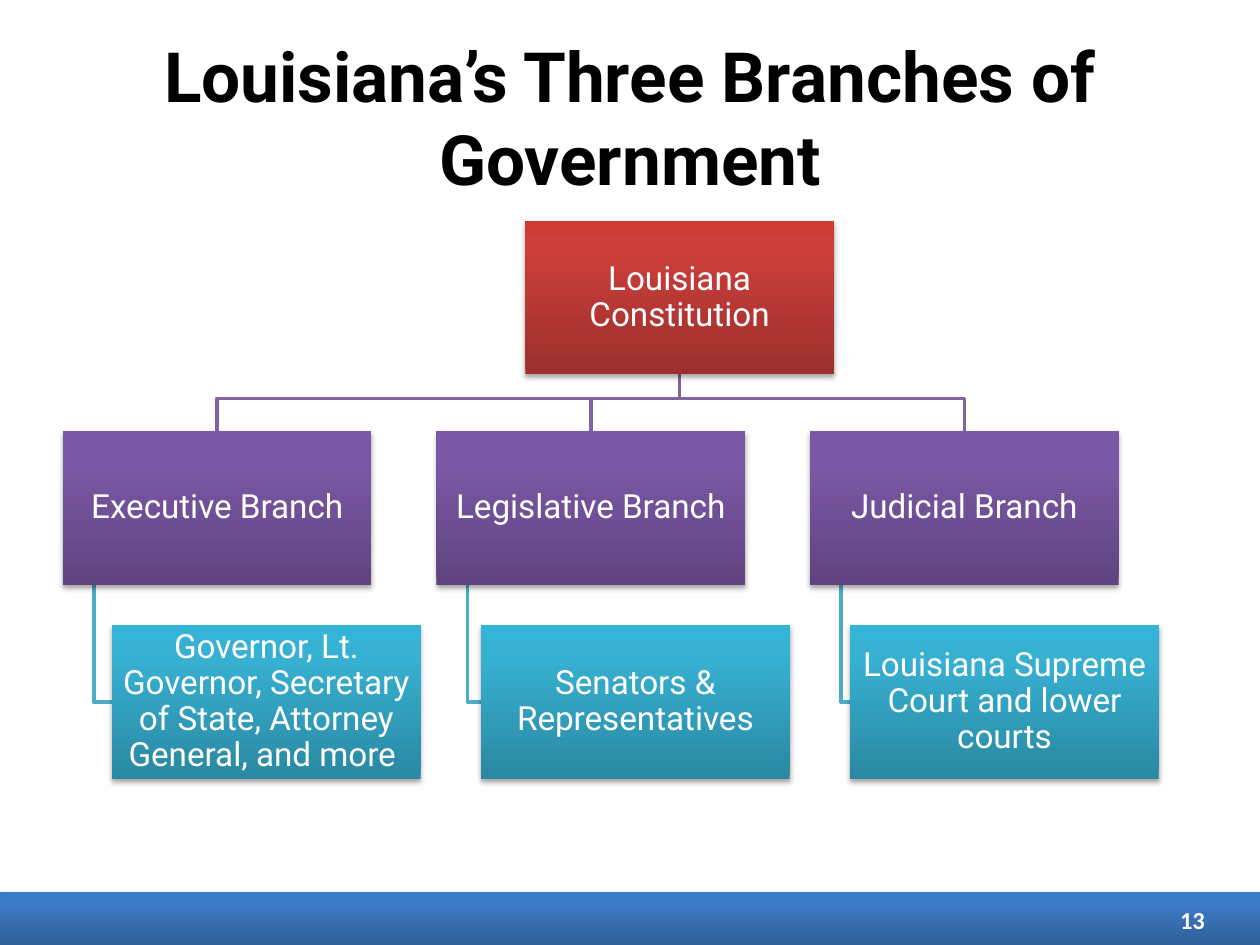
from lxml.etree import SubElement
from pptx import Presentation
from pptx.dml.color import RGBColor
from pptx.enum.shapes import MSO_SHAPE
from pptx.enum.text import MSO_ANCHOR, PP_ALIGN
from pptx.oxml.ns import qn
from pptx.util import Cm, Pt

TITLE = "Louisiana’s Three Branches of Government"
PAGE = "13"
ROOT = "Louisiana Constitution"
BRANCHES = [
    ("Executive Branch",
     "Governor, Lt. Governor, Secretary of State, Attorney General, and more "),
    ("Legislative Branch", "Senators & Representatives"),
    ("Judicial Branch", "Louisiana Supreme Court and lower courts"),
]

THEME = {
    "font": "Roboto", "page font": "Calibri",
    "title": 39.6, "node": 19, "page": 14,
    "dark": "000000", "light": "FFFFFF",
    "root": ("9C2F2D", "CB3E3A", "CE3B37"),
    "branch": ("5F4480", "7B58A6", "7C57A8"),
    "leaf": ("2A88A2", "37B1D2", "34B4D6"),
    "bar": ("2F5F99", "3D7CC7", "3A7CCB"),
    "branch line": "8064A2", "leaf line": "4BACC6", "line": 2,
}

WIDE, HIGH = 25.4, 19.05
BOX_W, BOX_H = 6.22, 3.1
ROOT_X, ROOT_Y = 10.59, 4.45
BRANCH_X, BRANCH_Y, BRANCH_STEP = 1.27, 8.69, 7.53
LEAF_X, LEAF_Y, LEAF_STEP = 2.26, 12.6, 7.44
BUS_Y = 8.03
BAR_H = 1.07

deck = Presentation()
deck.slide_width, deck.slide_height = Cm(WIDE), Cm(HIGH)
slide = deck.slides.add_slide(deck.slide_layouts[6])
shapes = slide.shapes


def write(shape, text, size, tint, font=THEME["font"], bold=False,
          align=PP_ALIGN.CENTER):
    frame = shape.text_frame
    frame.word_wrap = True
    frame.vertical_anchor = MSO_ANCHOR.MIDDLE
    frame.text = text
    para = frame.paragraphs[0]
    para.alignment = align
    face = para.runs[0].font
    face.name, face.size, face.bold = font, Pt(size), bold
    face.color.rgb = RGBColor.from_string(tint)
    return frame


def label(x, y, w, h, *args, **style):
    write(shapes.add_textbox(Cm(x), Cm(y), Cm(w), Cm(h)), *args, **style)


def block(x, y, w, h, tints):
    shape = shapes.add_shape(MSO_SHAPE.RECTANGLE, Cm(x), Cm(y), Cm(w), Cm(h))
    shape.line.fill.background()
    shape.fill.gradient()
    shape.fill.gradient_angle = 90
    stops = shape.element.spPr.find(".//" + qn("a:gsLst"))
    for old in list(stops):
        stops.remove(old)
    for pos, tint in zip((0, 80, 100), tints):
        stop = SubElement(stops, qn("a:gs"), pos=str(pos * 1000))
        SubElement(stop, qn("a:srgbClr"), val=tint)
    shape.shadow.inherit = False
    glow = SubElement(
        shape.element.spPr.find(qn("a:effectLst")), qn("a:outerShdw"),
        blurRad=str(Pt(3.1)), dist=str(Pt(1.8)), dir="5400000", rotWithShape="0")
    shade = SubElement(glow, qn("a:srgbClr"), val=THEME["dark"])
    SubElement(shade, qn("a:alpha"), val="35000")
    return shape


def node(x, y, text, kind):
    shape = block(x, y, BOX_W, BOX_H, THEME[kind])
    frame = write(shape, text, THEME["node"], THEME["light"])
    frame.margin_left = frame.margin_right = Cm(0.03)
    frame.margin_top = frame.margin_bottom = Cm(0.03)
    frame.paragraphs[0].line_spacing = 0.9


def link(points, kind):
    start, *rest = [(Cm(x), Cm(y)) for x, y in points]
    pen = shapes.build_freeform(*start)
    pen.add_line_segments(rest, close=False)
    shape = pen.convert_to_shape()
    shape.fill.background()
    shape.line.color.rgb = RGBColor.from_string(THEME[kind + " line"])
    shape.line.width = Pt(THEME["line"])
    shape.shadow.inherit = False


block(0, HIGH - BAR_H, WIDE, BAR_H, THEME["bar"])
label(1.27, 0.76, 22.86, 3.18, TITLE, THEME["title"], THEME["dark"], bold=True)
label(18.62, 18.03, 5.92, 1.02, PAGE, THEME["page"], THEME["light"],
      font=THEME["page font"], bold=True, align=PP_ALIGN.RIGHT)

spots = [(BRANCH_X + i * BRANCH_STEP, LEAF_X + i * LEAF_STEP)
         for i in range(len(BRANCHES))]
mid = ROOT_X + BOX_W / 2
for left, leaf in spots:
    stem = left + BOX_W / 10
    half = left + BOX_W / 2
    turn = LEAF_Y + BOX_H / 2
    link([(stem, BRANCH_Y + BOX_H), (stem, turn), (leaf, turn)], "leaf")
    link([(mid, ROOT_Y + BOX_H), (mid, BUS_Y), (half, BUS_Y),
          (half, BRANCH_Y)], "branch")

node(ROOT_X, ROOT_Y, ROOT, "root")
for (left, leaf), (name, staff) in zip(spots, BRANCHES):
    node(left, BRANCH_Y, name, "branch")
    node(leaf, LEAF_Y, staff, "leaf")

deck.save("out.pptx")
